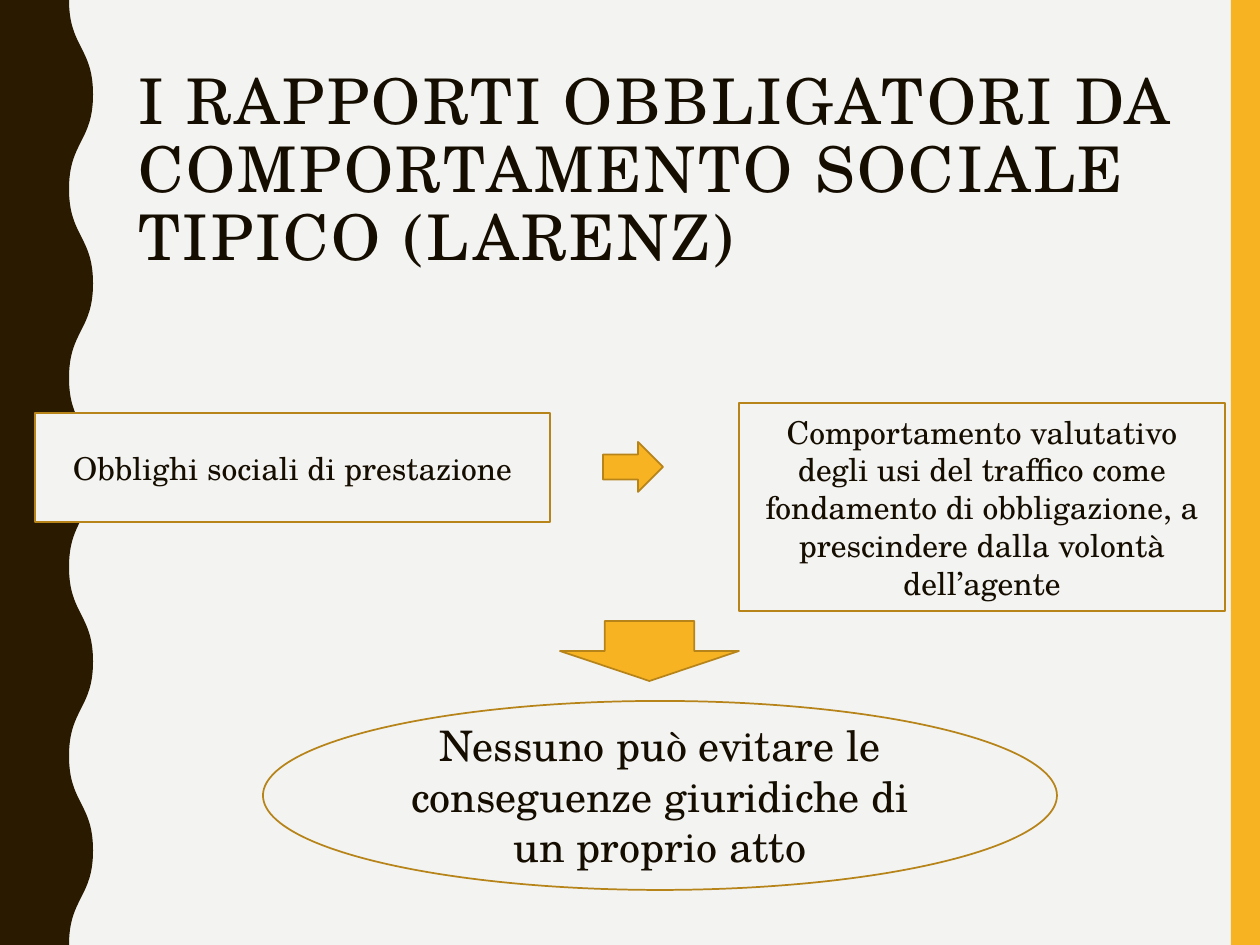
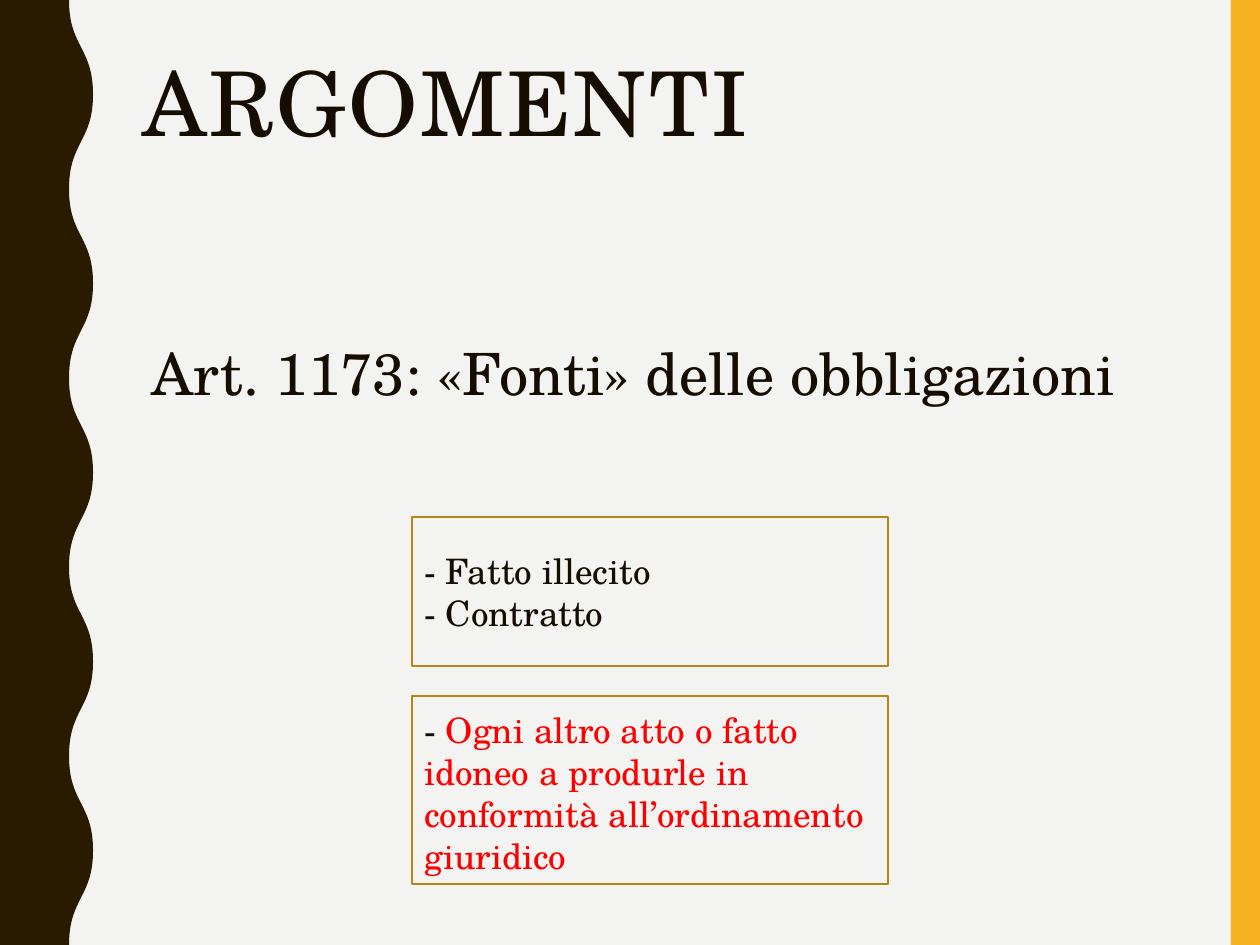
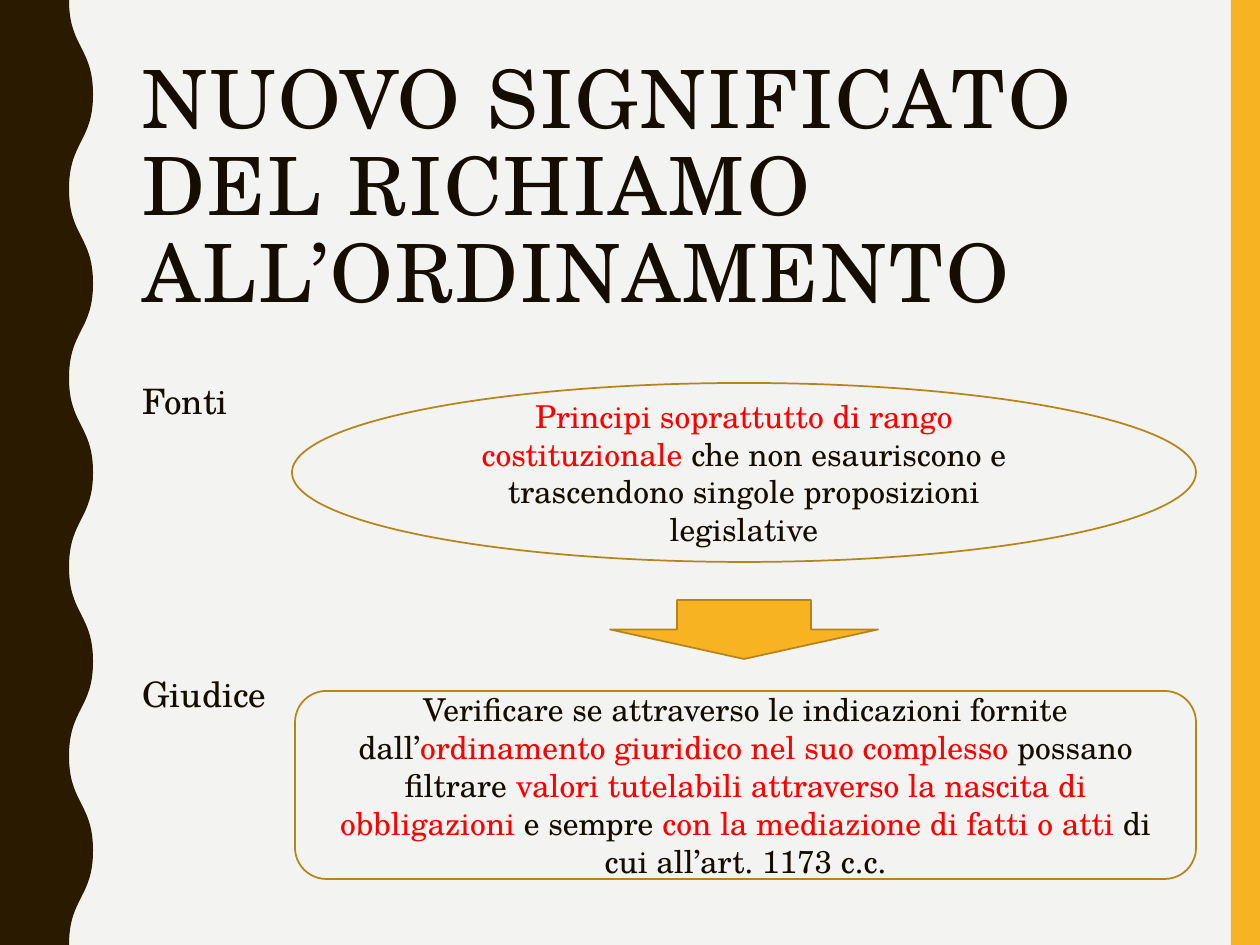
"""Build three slides on the sources of obligations in Italian civil law."""
from copy import deepcopy

from pptx import Presentation
from pptx.dml.color import RGBColor
from pptx.enum.shapes import MSO_SHAPE as SHAPE
from pptx.enum.text import MSO_ANCHOR as ANCHOR, PP_ALIGN as ALIGN
from pptx.oxml.ns import qn
from pptx.util import Pt

PX = 914400 / 126
WIDTH, HEIGHT = 1260, 945
FONT = "TeX Gyre Schola"
PAPER, INK, RED = "F3F3F2", "150D00", "FF0000"
AMBER, OCHRE, BROWN = "F8B323", "B7841A", "2A1A00"
TITLE = dict(leading=0.9, tracking=150)
CREST, TROUGH, WAVES = 93, 69, 10


def paint(part, fill, line=None):
    """Set the fill and outline of a shape, without a shadow."""
    part.shadow.inherit = False
    part.fill.solid()
    part.fill.fore_color.rgb = RGBColor.from_string(fill)
    if line:
        part.line.color.rgb = RGBColor.from_string(line)
        part.line.width = Pt(1)
    else:
        part.line.fill.background()


def write(text, on, box, kind=None, fill=PAPER, line=OCHRE, size=18, align=ALIGN.LEFT,
          leading=None, tracking=None, gap=0, top=None):
    """Place text, one paragraph a line, with red parts between bars."""
    place = [round(n * PX) for n in box]
    if kind is None:
        part = on.shapes.add_textbox(*place)
    else:
        part = on.shapes.add_shape(kind, *place)
        paint(part, fill, line)
    if not text:
        return
    frame = part.text_frame
    frame.word_wrap = True
    if top:
        frame.margin_top = round(top * PX)
    frame.vertical_anchor = ANCHOR.TOP if kind is None else ANCHOR.MIDDLE
    for row, words in enumerate(text.split("\n")):
        paragraph = frame.add_paragraph() if row else frame.paragraphs[0]
        paragraph.alignment = align
        if leading:
            paragraph.line_spacing = leading
        if row and gap:
            paragraph.space_before = Pt(gap)
        for turn, piece in enumerate(words.split("|")):
            if not piece:
                continue
            run = paragraph.add_run()
            run.text = piece
            run.font.name = FONT
            run.font.size = Pt(size)
            run.font.color.rgb = RGBColor.from_string(RED if turn % 2 else INK)
            if tracking:
                run.font._element.set("spc", str(tracking))


deck = Presentation()
deck.slide_width, deck.slide_height = round(WIDTH * PX), round(HEIGHT * PX)

edge = [((TROUGH if turn % 2 == 0 else CREST) * PX, turn * HEIGHT / WAVES * PX)
        for turn in range(WAVES + 1)]
corners = [(0, HEIGHT * PX), (0, 0)]

slides = []
for number in range(3):
    slide = deck.slides.add_slide(deck.slide_layouts[6])
    slide.background.fill.solid()
    slide.background.fill.fore_color.rgb = RGBColor.from_string(PAPER)
    write("", slide, (1231, 0, 29, HEIGHT), SHAPE.RECTANGLE, AMBER, None)
    outline = slide.shapes.build_freeform(*edge[0])
    outline.add_line_segments(edge[1:] + corners, close=True)
    curtain = outline.convert_to_shape()
    paint(curtain, BROWN)
    sides = list(curtain._element.iter(qn("a:lnTo")))[:WAVES]
    for side, (x0, y0), (x1, y1) in zip(sides, edge, edge[1:]):
        side.tag = qn("a:cubicBezTo")
        for spot, x in enumerate((x0, x1)):
            handle = deepcopy(side[-1])
            handle.set("x", str(round(x)))
            handle.set("y", str(round((y0 + y1) / 2)))
            side.insert(spot, handle)
    slides.append(slide)
larenz, topics, meaning = slides

write("I RAPPORTI OBBLIGATORI DA COMPORTAMENTO SOCIALE TIPICO (LARENZ)",
      larenz, (126, 64, 1070, 173), size=36, **TITLE)
write("Obblighi sociali di prestazione", larenz, (35, 413, 515, 109),
      SHAPE.RECTANGLE, align=ALIGN.CENTER)
write("", larenz, (603, 442, 60, 50), SHAPE.RIGHT_ARROW, AMBER)
write("Comportamento valutativo degli usi del traffico come fondamento di obbligazione, "
      "a prescindere dalla volontà dell’agente",
      larenz, (739, 403, 486, 208), SHAPE.RECTANGLE, align=ALIGN.CENTER)
write("", larenz, (560, 621, 179, 60), SHAPE.DOWN_ARROW, AMBER)
write("Nessuno può evitare le conseguenze giuridiche di un proprio atto",
      larenz, (263, 701, 794, 189), SHAPE.OVAL, size=24, align=ALIGN.CENTER)

write("ARGOMENTI", topics, (130, 53, 1052, 205), size=51, **TITLE)
write("Art. 1173: «Fonti» delle obbligazioni", topics, (123, 324, 1021, 164),
      size=33.3, align=ALIGN.CENTER, leading=1.1)
write("- |Ogni altro atto o fatto idoneo a produrle in conformità all’ordinamento giuridico",
      topics, (412, 696, 476, 188), SHAPE.RECTANGLE, size=20, top=12)
write("- Fatto illecito\n- Contratto", topics, (412, 517, 476, 149),
      SHAPE.RECTANGLE, size=20)

write("NUOVO SIGNIFICATO DEL RICHIAMO ALL’ORDINAMENTO",
      meaning, (130, 53, 1052, 205), size=45.9, **TITLE)
write("Fonti\nGiudice", meaning, (130, 315, 1052, 495),
      size=20, leading=1.1, gap=141, top=60)
write("|Principi soprattutto di rango costituzionale |che non esauriscono e trascendono "
      "singole proposizioni legislative",
      meaning, (292, 383, 904, 179), SHAPE.OVAL, align=ALIGN.CENTER)
write("", meaning, (610, 600, 268, 59), SHAPE.DOWN_ARROW, AMBER)
write("Verificare se attraverso le indicazioni fornite dall’|ordinamento giuridico nel suo "
      "complesso |possano filtrare |valori tutelabili attraverso la nascita di obbligazioni"
      "| e sempre |con la mediazione di fatti o atti| di cui all’art. 1173 c.c.",
      meaning, (295, 691, 901, 188), SHAPE.ROUNDED_RECTANGLE, align=ALIGN.CENTER)

deck.save("out.pptx")
